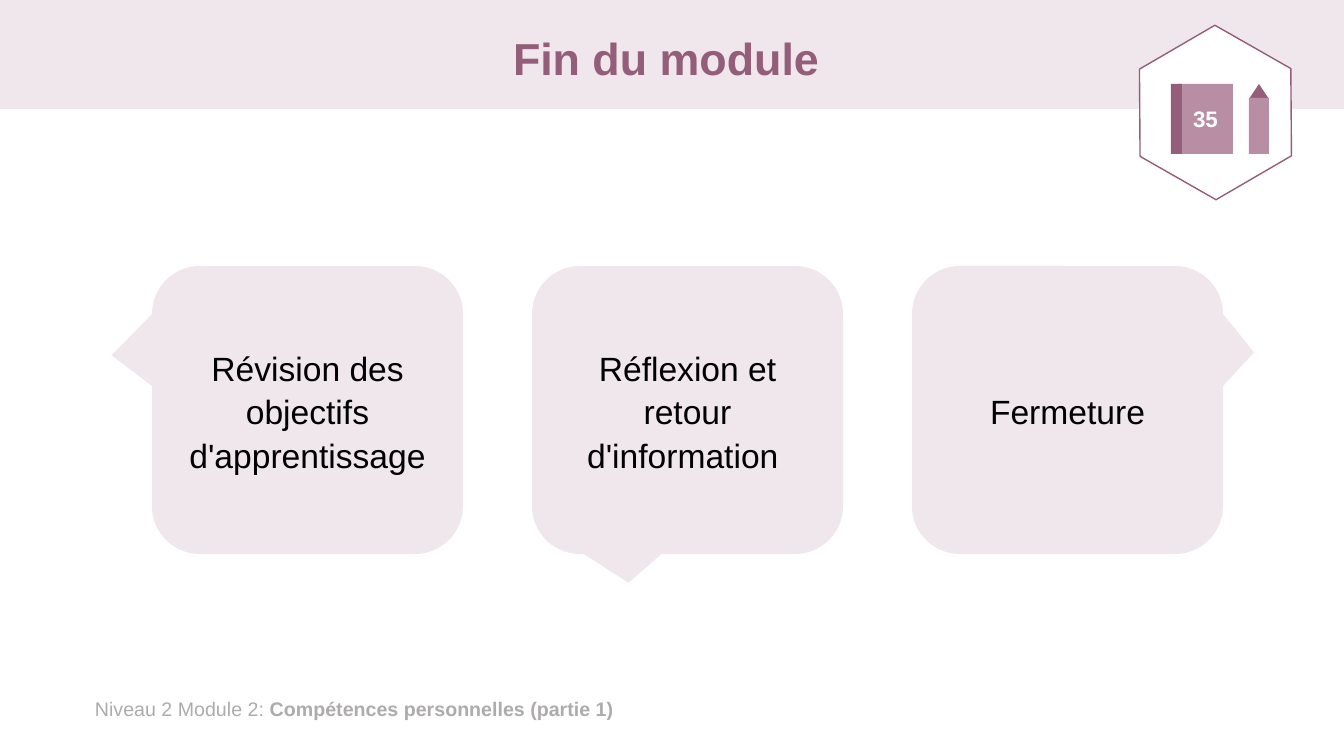
from pptx import Presentation
from pptx.dml.color import RGBColor
from pptx.enum.shapes import MSO_SHAPE
from pptx.enum.text import MSO_ANCHOR, MSO_AUTO_SIZE, PP_ALIGN
from pptx.util import Emu, Pt

RECT, HEX = MSO_SHAPE.RECTANGLE, MSO_SHAPE.HEXAGON
TIP, CALL = MSO_SHAPE.ISOSCELES_TRIANGLE, MSO_SHAPE.ROUNDED_RECTANGULAR_CALLOUT
MID, TOP = MSO_ANCHOR.MIDDLE, MSO_ANCHOR.TOP
LEFT, CENTER = PP_ALIGN.LEFT, PP_ALIGN.CENTER

# Content
COLORS = {"pale": "F0E7EC", "plum": "945E7A", "mauve": "B78EA3",
          "white": "FFFFFF", "black": "000000", "gray": "AEABAB"}
FONT = "Arial"
TITLE = "Fin du module "
FOOTER = [("Niveau 2 Module 2: ", False),
          ("Compétences personnelles (partie 1)", True)]
NUMBER = "35"
STEPS = [  # text, pointer tip relative to the bubble centre
    ("Révision des objectifs d'apprentissage", (-0.63, -0.19)),
    ("Réflexion et retour d'information ", (-0.19, 0.6)),
    ("Fermeture", (0.6, -0.2)),
]

# Layout in px
SCALE = 914400 / 100.8
WIDE, HIGH = 1344, 756
BAND = (0, 0, WIDE, 109)
HEAD = (93, 13, 1159, 96)
FOOT = (85, 692, 1144, 34)
BUBBLE = (152, 266, 311, 288)
STEP = 380
BADGE = (1128, 37, 175, 151)
BOOK = (1178, 84, 55, 70)
ICON = [  # kind, box, colour
    (RECT, (1171, 84, 11, 70), "plum"),
    (TIP, (1249, 84, 20, 15), "plum"),
    (RECT, (1249, 98, 20, 56), "mauve"),
]


def px(n):
    return Emu(round(n * SCALE))


def rgb(name):
    return RGBColor.from_string(COLORS[name])


def draw(kind, box, fill, line=None):
    shape = slide.shapes.add_shape(kind, *map(px, box))
    shape.shadow.inherit = False
    shape.fill.solid()
    shape.fill.fore_color.rgb = rgb(fill)
    if line:
        shape.line.color.rgb = rgb(line)
        shape.line.width = Pt(1)
    else:
        shape.line.fill.background()
    return shape


def write(shape, runs, size, color, align=CENTER, anchor=MID, space=1.0):
    frame = shape.text_frame
    frame.word_wrap = True
    frame.auto_size = MSO_AUTO_SIZE.NONE
    frame.vertical_anchor = anchor
    para = frame.paragraphs[0]
    para.alignment = align
    para.line_spacing = space
    for text, bold in runs:
        run = para.add_run()
        run.text = text
        run.font.name = FONT
        run.font.size = Pt(size)
        run.font.bold = bold
        run.font.color.rgb = rgb(color)


deck = Presentation()
deck.slide_width, deck.slide_height = px(WIDE), px(HIGH)
slide = deck.slides.add_slide(deck.slide_layouts[5])

# Band and footer
draw(RECT, BAND, "pale")
foot = slide.shapes.add_textbox(*map(px, FOOT))
write(foot, FOOTER, 14, "gray", LEFT, TOP)

# Title, raised above the band
title = slide.shapes.title
title.left, title.top, title.width, title.height = map(px, HEAD)
title.element.getparent().append(title.element)
write(title, [(TITLE, True)], 32, "plum", space=0.9)

# Speech bubbles
left, top, wide, high = BUBBLE
for i, (text, tip) in enumerate(STEPS):
    bubble = draw(CALL, (left + i * STEP, top, wide, high), "pale")
    bubble.adjustments[0], bubble.adjustments[1] = tip
    write(bubble, [(text, False)], 24, "black", space=1.07)

# Badge with book and pencil
badge = draw(HEX, BADGE, "white", "plum")
badge.adjustments[0] = 0.29
badge.rotation = 29.7
book = draw(RECT, BOOK, "mauve")
write(book, [(NUMBER, True)], 16, "white")
for kind, box, fill in ICON:
    draw(kind, box, fill)

deck.save("out.pptx")
